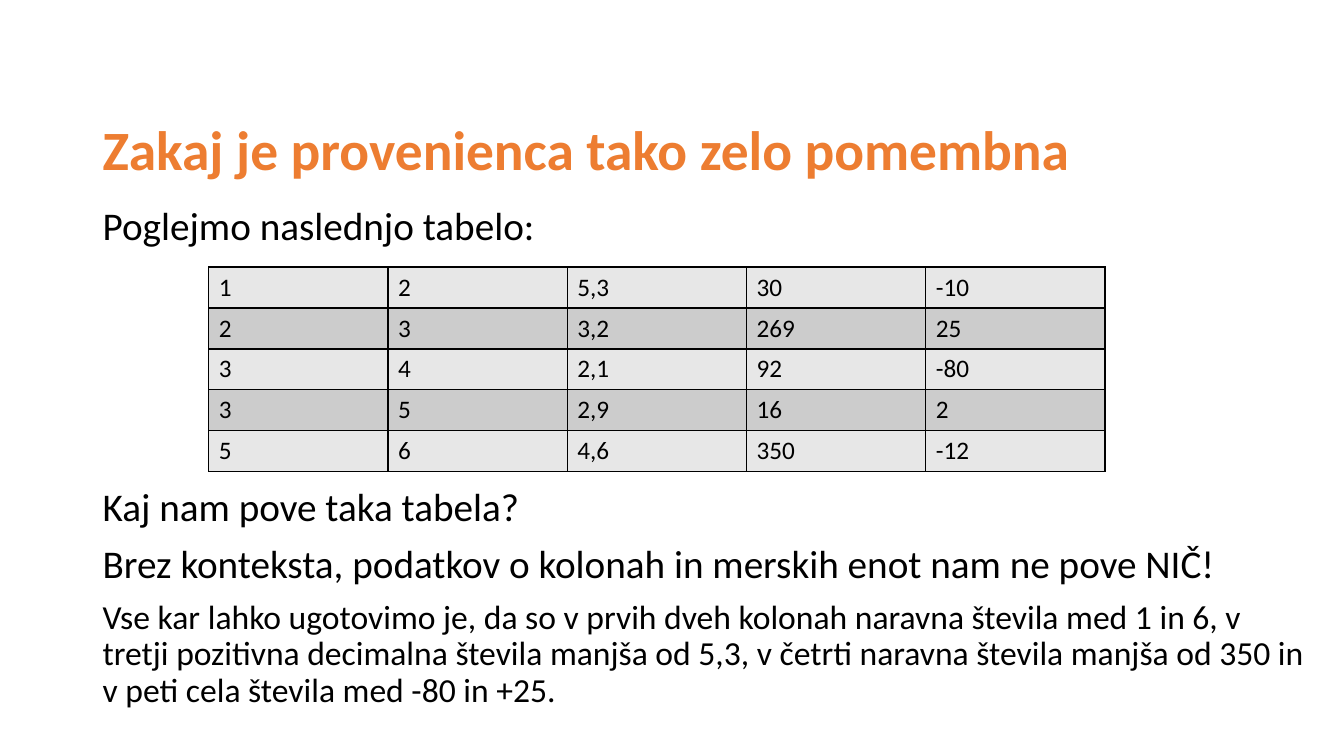
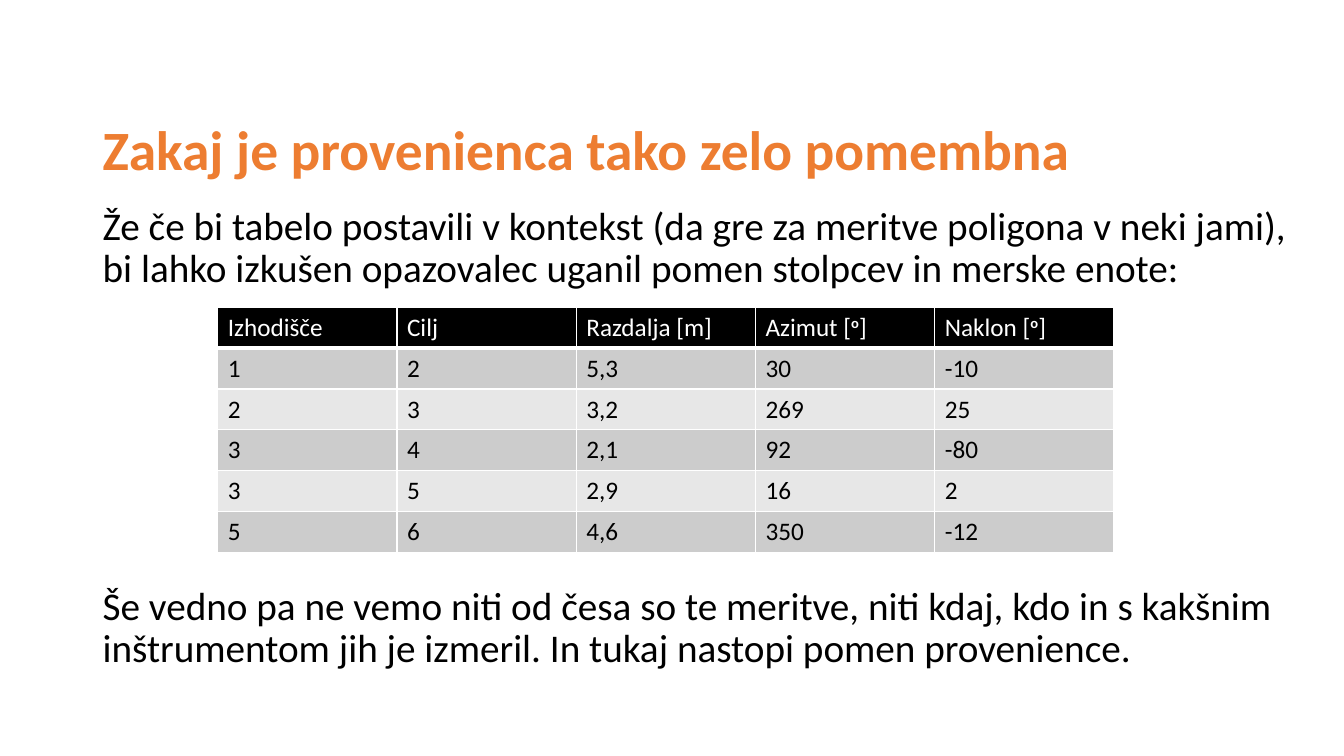
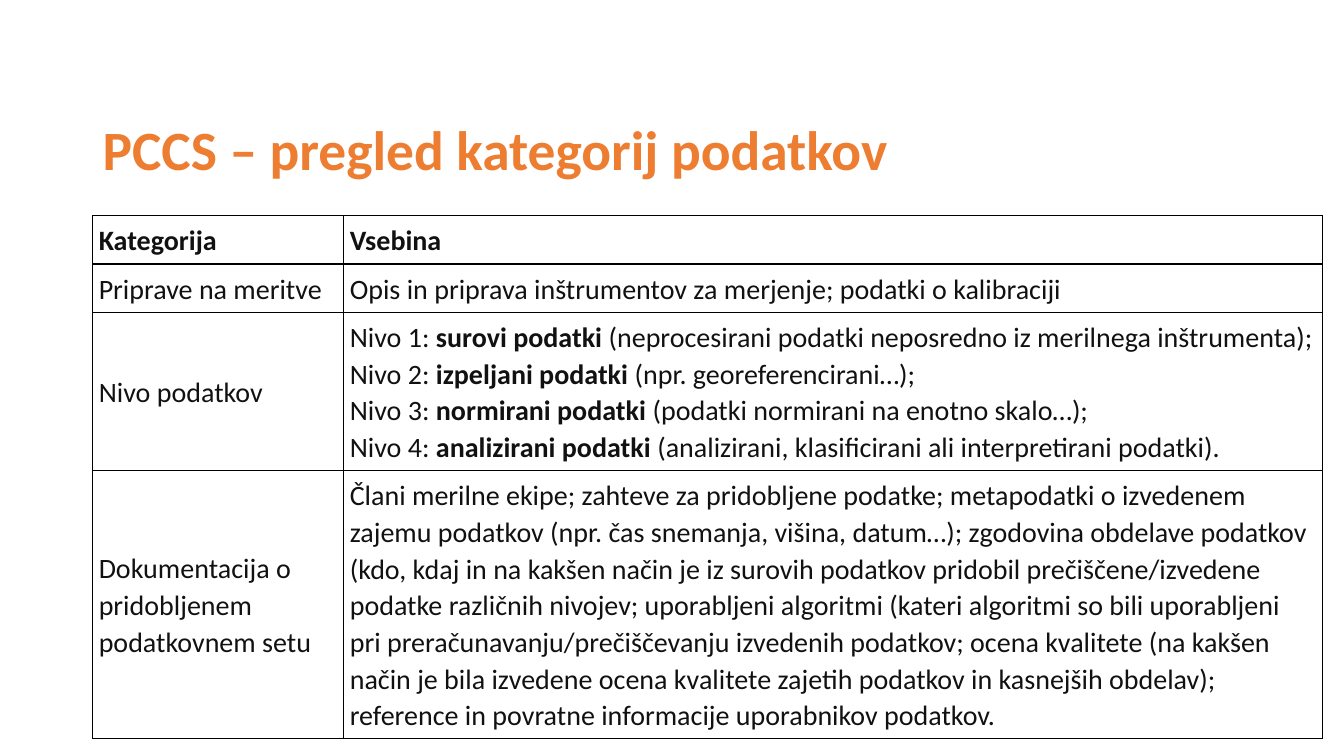
from lxml.etree import SubElement
from pptx import Presentation
from pptx.dml.color import RGBColor
from pptx.enum.text import MSO_ANCHOR as Anchor
from pptx.oxml.ns import qn
from pptx.util import Inches, Pt

WIDTH, HEIGHT = Inches(13.33), Inches(7.5)
FONT = "Calibri"
COLORS = {
    "title": "ED7D31", "black": "000000", "white": "FFFFFF",
    "ink": "111111", "light": "E7E7E7", "dark": "CCCCCC",
}
# Shares of the slide, in percent: left edge and width of the content
LEFT, CONTENT = 6.9, 91.52

TITLE = {"size": Pt(39.6), "bold": True, "color": "title"}
BODY = {"size": Pt(28), "bold": False, "color": "black"}
DETAIL = {**BODY, "size": Pt(24)}
CELL = {**BODY, "size": Pt(18)}
HEADER = {**CELL, "color": "white"}
CATEGORY = {"size": Pt(20), "bold": False, "color": "ink"}

MEASUREMENTS = [
    ["1", "2", "5,3", "30", "-10"],
    ["2", "3", "3,2", "269", "25"],
    ["3", "4", "2,1", "92", "-80"],
    ["3", "5", "2,9", "16", "2"],
    ["5", "6", "4,6", "350", "-12"],
]
# Text between asterisks is emphasised
MEASUREMENT_HEADER = ["Izhodišče", "Cilj", "Razdalja [m]", "Azimut [*o*]", "Naklon [*o*]"]
CATEGORIES = [
    ["*Kategorija*", "*Vsebina*"],
    ["Priprave na meritve",
     "Opis in priprava inštrumentov za merjenje; podatki o kalibraciji"],
    ["Nivo podatkov",
     "Nivo 1: *surovi podatki *(neprocesirani podatki neposredno iz merilnega inštrumenta);\n"
     "Nivo 2: *izpeljani podatki *(npr. georeferencirani…);\n"
     "Nivo 3: *normirani podatki *(podatki normirani na enotno skalo…);\n"
     "Nivo 4: *analizirani podatki *(analizirani, klasificirani ali interpretirani podatki)."],
    ["Dokumentacija o pridobljenem podatkovnem setu",
     "Člani merilne ekipe; zahteve za pridobljene podatke; metapodatki o izvedenem zajemu "
     "podatkov (npr. čas snemanja, višina, datum…); zgodovina obdelave podatkov (kdo, kdaj in "
     "na kakšen način je iz surovih podatkov pridobil prečiščene/izvedene podatke različnih "
     "nivojev; uporabljeni algoritmi (kateri algoritmi so bili uporabljeni pri "
     "preračunavanju/prečiščevanju izvedenih podatkov; ocena kvalitete (na kakšen način je bila "
     "izvedene ocena kvalitete zajetih podatkov in kasnejših obdelav); reference in povratne "
     "informacije uporabnikov podatkov."],
]


def across(share):
    return round(WIDTH * share / 100)


def down(share):
    return round(HEIGHT * share / 100)


def set_all(target, values):
    for name, value in values.items():
        setattr(target, name, value)


# Text
def write(paragraph, text, style, superscript=False):
    for index, part in enumerate(text.split("*")):
        if not part:
            continue
        emphasised = index % 2 == 1
        run = paragraph.add_run()
        run.text = part
        set_all(run.font, {"name": FONT, "size": style["size"],
                           "bold": style["bold"] or emphasised})
        run.font.color.rgb = RGBColor.from_string(COLORS[style["color"]])
        if emphasised and superscript:
            run.font._element.set("baseline", "30000")


def add_text(slide, top, height, paragraphs, anchor=Anchor.TOP):
    shape = slide.shapes.add_textbox(across(LEFT), down(top), across(CONTENT), down(height))
    frame = shape.text_frame
    set_all(frame, {"word_wrap": True, "vertical_anchor": anchor})
    for index, (text, style) in enumerate(paragraphs):
        paragraph = frame.add_paragraph() if index else frame.paragraphs[0]
        set_all(paragraph, {"line_spacing": 0.9, "space_before": Pt(10 if index else 0)})
        write(paragraph, text, style)


def add_titled_slide(presentation, title):
    slide = presentation.slides.add_slide(presentation.slide_layouts[6])
    add_text(slide, 15.73, 8.93, [(title, TITLE)], Anchor.MIDDLE)
    return slide


# Tables
def set_borders(cell, color, bottom=1):
    properties = cell._tc.get_or_add_tcPr()
    widths = {"a:lnL": 1, "a:lnR": 1, "a:lnT": 1, "a:lnB": bottom}
    for position, (tag, width) in enumerate(widths.items()):
        line = SubElement(properties, qn(tag), w=str(Pt(width)))
        properties.remove(line)
        properties.insert(position, line)
        fill = SubElement(line, qn("a:solidFill"))
        SubElement(fill, qn("a:srgbClr"), val=COLORS[color])


def add_grid(slide, place, columns, rows):
    """Add a plain table whose columns and rows share its size by weight."""
    left, top, width, height = place
    table = slide.shapes.add_table(len(rows), len(columns), across(left), down(top),
                                   across(width), down(height)).table
    set_all(table, {"first_row": False, "horz_banding": False})
    for column, weight in zip(table.columns, columns):
        column.width = across(width * weight / sum(columns))
    for row, weight in zip(table.rows, rows):
        row.height = down(height * weight / sum(rows))
    return table


def add_measurements(slide, place, border, header=None):
    rows = ([header] if header else []) + MEASUREMENTS
    table = add_grid(slide, place, [1] * len(rows[0]), [1] * len(rows))
    for row_index, row in enumerate(rows):
        is_header = header is not None and row_index == 0
        fill = "black" if is_header else ("light", "dark")[row_index % 2]
        for column_index, text in enumerate(row):
            cell = table.cell(row_index, column_index)
            cell.fill.solid()
            cell.fill.fore_color.rgb = RGBColor.from_string(COLORS[fill])
            set_borders(cell, border, bottom=3 if is_header else 1)
            write(cell.text_frame.paragraphs[0], text, HEADER if is_header else CELL,
                  superscript=True)


def add_categories(slide, place):
    table = add_grid(slide, place, [2.49, 9.71], [0.48, 0.48, 1.57, 2.66])
    margins = dict.fromkeys(
        ["margin_left", "margin_top", "margin_right", "margin_bottom"], Inches(0.06))
    for row_index, row in enumerate(CATEGORIES):
        for column_index, text in enumerate(row):
            cell = table.cell(row_index, column_index)
            set_all(cell, {**margins, "vertical_anchor": Anchor.MIDDLE})
            cell.fill.background()
            set_borders(cell, "black")
            frame = cell.text_frame
            for index, line in enumerate(text.split("\n")):
                paragraph = frame.add_paragraph() if index else frame.paragraphs[0]
                paragraph.line_spacing = 1.07
                write(paragraph, line, CATEGORY)


def main():
    presentation = Presentation()
    set_all(presentation, {"slide_width": WIDTH, "slide_height": HEIGHT})
    why_title = "Zakaj je provenienca tako zelo pomembna"

    # Table without context
    slide = add_titled_slide(presentation, why_title)
    add_text(slide, 26.67, 8, [("Poglejmo naslednjo tabelo:", BODY)])
    add_text(slide, 63.87, 32.4, [
        ("Kaj nam pove taka tabela?", BODY),
        ("Brez konteksta, podatkov o kolonah in merskih enot nam ne pove NIČ!", BODY),
        ("Vse kar lahko ugotovimo je, da so v prvih dveh kolonah naravna števila med 1 in 6, "
         "v tretji pozitivna decimalna števila manjša od 5,3, v četrti naravna števila manjša "
         "od 350 in v peti cela števila med -80 in +25.", DETAIL),
    ])
    add_measurements(slide, (15.53, 35.33, 66.69, 27.07), "black")

    # Table with context
    slide = add_titled_slide(presentation, why_title)
    add_text(slide, 26.67, 13, [
        ("Že če bi tabelo postavili v kontekst (da gre za meritve poligona v neki jami), bi "
         "lahko izkušen opazovalec uganil pomen stolpcev in merske enote:", BODY)])
    add_text(slide, 76.93, 13, [
        ("Še vedno pa ne vemo niti od česa so te meritve, niti kdaj, kdo in s kakšnim "
         "inštrumentom jih je izmeril. In tukaj nastopi pomen provenience.", BODY)])
    add_measurements(slide, (16.2, 40.67, 66.69, 32.4), "white", MEASUREMENT_HEADER)

    # Data categories
    slide = add_titled_slide(presentation, "PCCS – pregled kategorij podatkov")
    add_categories(slide, (LEFT, 28.53, CONTENT, 69.2))

    presentation.save("out.pptx")


if __name__ == "__main__":
    main()
